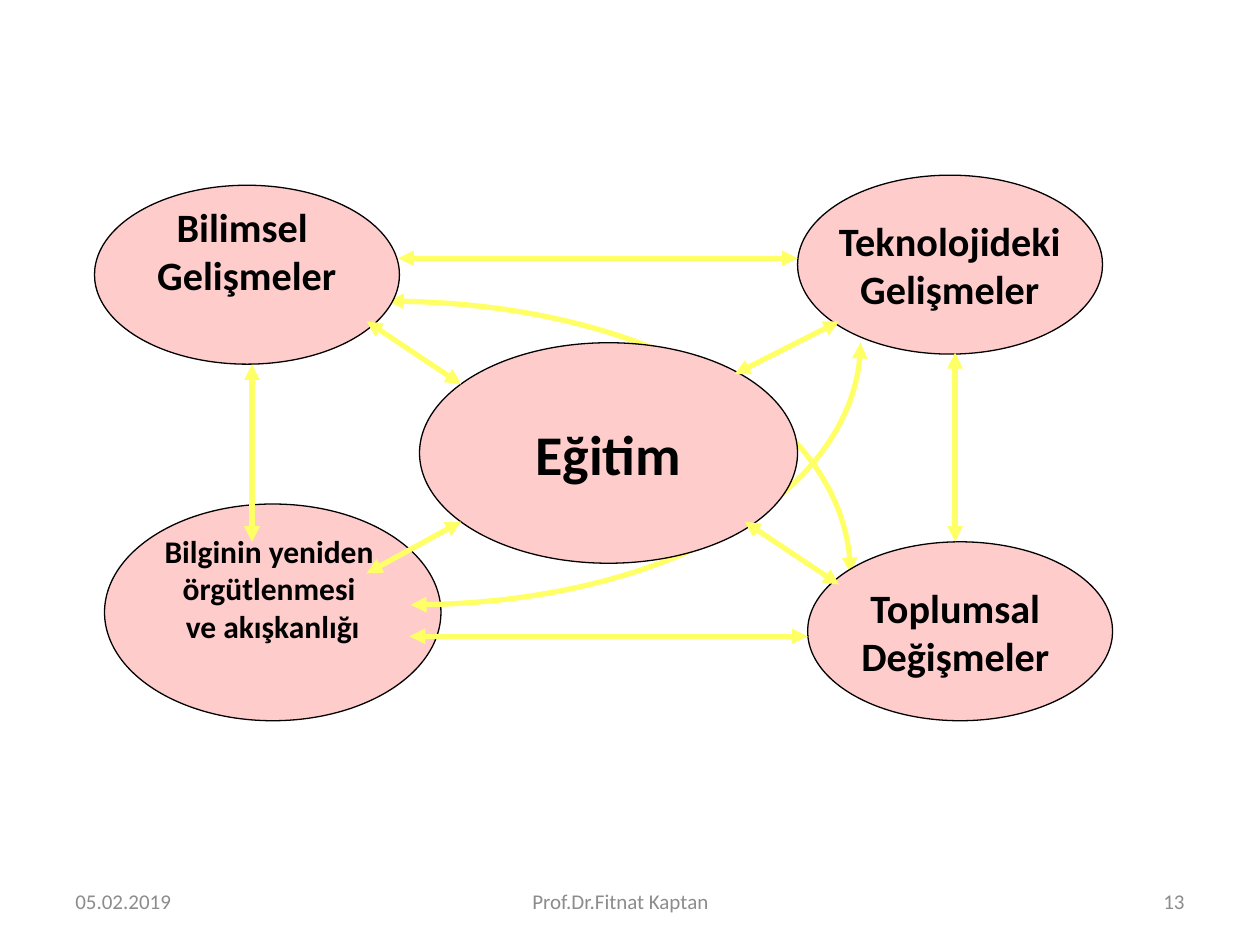
from dataclasses import dataclass

from lxml import etree
from pptx import Presentation
from pptx.dml.color import RGBColor
from pptx.enum.shapes import MSO_CONNECTOR, MSO_SHAPE
from pptx.enum.text import MSO_ANCHOR, PP_ALIGN
from pptx.oxml.ns import qn
from pptx.util import Inches, Pt

OVAL = MSO_SHAPE.OVAL
STRAIGHT = MSO_CONNECTOR.STRAIGHT
MIDDLE = MSO_ANCHOR.MIDDLE
LEFT, CENTER, RIGHT = PP_ALIGN.LEFT, PP_ALIGN.CENTER, PP_ALIGN.RIGHT

Point = tuple[float, float]


@dataclass(frozen=True)
class Theme:
    font: str = "Calibri"
    oval: RGBColor = RGBColor(0xFF, 0xCC, 0xCC)
    ink: RGBColor = RGBColor(0, 0, 0)
    arrow: RGBColor = RGBColor(0xFF, 0xFF, 0x66)
    footer: RGBColor = RGBColor(0x8C, 0x8C, 0x8C)
    core_size: int = 32
    topic_size: int = 23
    detail_size: int = 18
    footer_size: int = 12
    outline: float = 0.75
    arrow_width: float = 3


THEME = Theme()


@dataclass(frozen=True)
class Topic:
    lines: tuple[str, ...]
    left: float
    top: float
    width: float = 2.42
    height: float = 1.42
    size: int = THEME.topic_size
    lift: float = 0


@dataclass(frozen=True)
class Curve:
    start: Point
    control_1: Point
    control_2: Point
    end: Point


@dataclass(frozen=True)
class Arrow:
    start: Point
    end: Point


@dataclass(frozen=True)
class Footer:
    text: str
    left: float
    width: float
    align: PP_ALIGN
    right_inset: float = 0.1


KNOWLEDGE = Topic(("Bilginin yeniden ", "örgütlenmesi ", "ve akışkanlığı"),
                  0.83, 4, 2.67, 1.72, THEME.detail_size, 0.19)
TOPICS = (
    Topic(("Eğitim",), 3.33, 2.72, 3, 1.75, THEME.core_size),
    Topic(("Teknolojideki", "Gelişmeler"), 6.33, 1.39),
    Topic(("Toplumsal ", "Değişmeler "), 6.41, 4.3),
    Topic(("Bilimsel ", "Gelişmeler"), 0.75, 1.47, lift=0.19),
)
CURVES = (
    Curve((3.26, 4.8), (5.24, 4.8), (6.83, 3.87), (6.83, 2.72)),
    Curve((3.08, 2.39), (5.11, 2.39), (6.75, 3.36), (6.75, 4.55)),
)
ARROWS = (
    Arrow((3.66, 4.14), (2.91, 4.55)),
    Arrow((6.66, 2.55), (5.83, 2.97)),
    Arrow((3.66, 3.05), (2.91, 2.55)),
    Arrow((6.66, 4.64), (5.91, 4.14)),
    Arrow((2, 2.89), (2, 4.3)),
    Arrow((7.58, 2.8), (7.58, 4.3)),
    Arrow((3.25, 5.05), (6.41, 5.05)),
    Arrow((3.16, 2.05), (6.33, 2.05)),
)
FOOTERS = (
    Footer("05.02.2019", 0.5, 2.33, LEFT),
    Footer("Prof.Dr.Fitnat Kaptan", 3.42, 3.17, CENTER, 0.26),
    Footer("13", 7.17, 2.33, RIGHT),
)


def write_line(p, text: str, size: int, color: RGBColor, align: PP_ALIGN, bold: bool = False) -> None:
    p.text = text
    p.alignment = align
    p.font.name = THEME.font
    p.font.size = Pt(size)
    p.font.bold = bold
    p.font.color.rgb = color


def style_arrow(s) -> None:
    s.line.color.rgb = THEME.arrow
    s.line.width = Pt(THEME.arrow_width)
    ln = s.line._get_or_add_ln()
    for end in ("a:headEnd", "a:tailEnd"):
        etree.SubElement(ln, qn(end), type="triangle")


def draw_topic(slide, topic: Topic) -> None:
    s = slide.shapes.add_shape(OVAL, Inches(topic.left), Inches(topic.top),
                               Inches(topic.width), Inches(topic.height))
    s.shadow.inherit = False
    s.fill.solid()
    s.fill.fore_color.rgb = THEME.oval
    s.line.color.rgb = THEME.ink
    s.line.width = Pt(THEME.outline)
    tf = s.text_frame
    tf.word_wrap = False
    tf.vertical_anchor = MIDDLE
    tf.margin_bottom = Inches(0.05 + 2 * topic.lift)
    for i, line in enumerate(topic.lines):
        p = tf.add_paragraph() if i else tf.paragraphs[0]
        write_line(p, line, topic.size, THEME.ink, CENTER, bold=True)


def draw_curve(slide, curve: Curve) -> None:
    start, *others = [
        (Inches(x), Inches(y))
        for x, y in (curve.start, curve.control_1, curve.control_2, curve.end)
    ]
    builder = slide.shapes.build_freeform(*start)
    builder.add_line_segments(others, close=False)
    s = builder.convert_to_shape()
    s.shadow.inherit = False
    s.fill.background()
    segments = list(s._element.iter(qn("a:lnTo")))
    bezier = etree.SubElement(segments[0].getparent(), qn("a:cubicBezTo"))
    for segment in segments:
        bezier.append(segment[0])
        segment.getparent().remove(segment)
    style_arrow(s)


def draw_arrow(slide, arrow: Arrow) -> None:
    ends = [Inches(v) for v in (*arrow.start, *arrow.end)]
    s = slide.shapes.add_connector(STRAIGHT, *ends)
    style_arrow(s)
    etree.SubElement(s._element.spPr, qn("a:effectLst"))


def draw_footer(slide, footer: Footer) -> None:
    s = slide.shapes.add_textbox(Inches(footer.left), Inches(6.95), Inches(footer.width), Inches(0.4))
    tf = s.text_frame
    tf.word_wrap = True
    tf.vertical_anchor = MIDDLE
    tf.margin_right = Inches(footer.right_inset)
    write_line(tf.paragraphs[0], footer.text, THEME.footer_size, THEME.footer, footer.align)


def main() -> None:
    prs = Presentation()
    prs.slide_width, prs.slide_height = Inches(10), Inches(7.5)
    slide = prs.slides.add_slide(prs.slide_layouts[6])
    draw_topic(slide, KNOWLEDGE)
    for curve in CURVES:
        draw_curve(slide, curve)
    for topic in TOPICS:
        draw_topic(slide, topic)
    for arrow in ARROWS:
        draw_arrow(slide, arrow)
    for footer in FOOTERS:
        draw_footer(slide, footer)
    prs.save("out.pptx")


if __name__ == "__main__":
    main()
